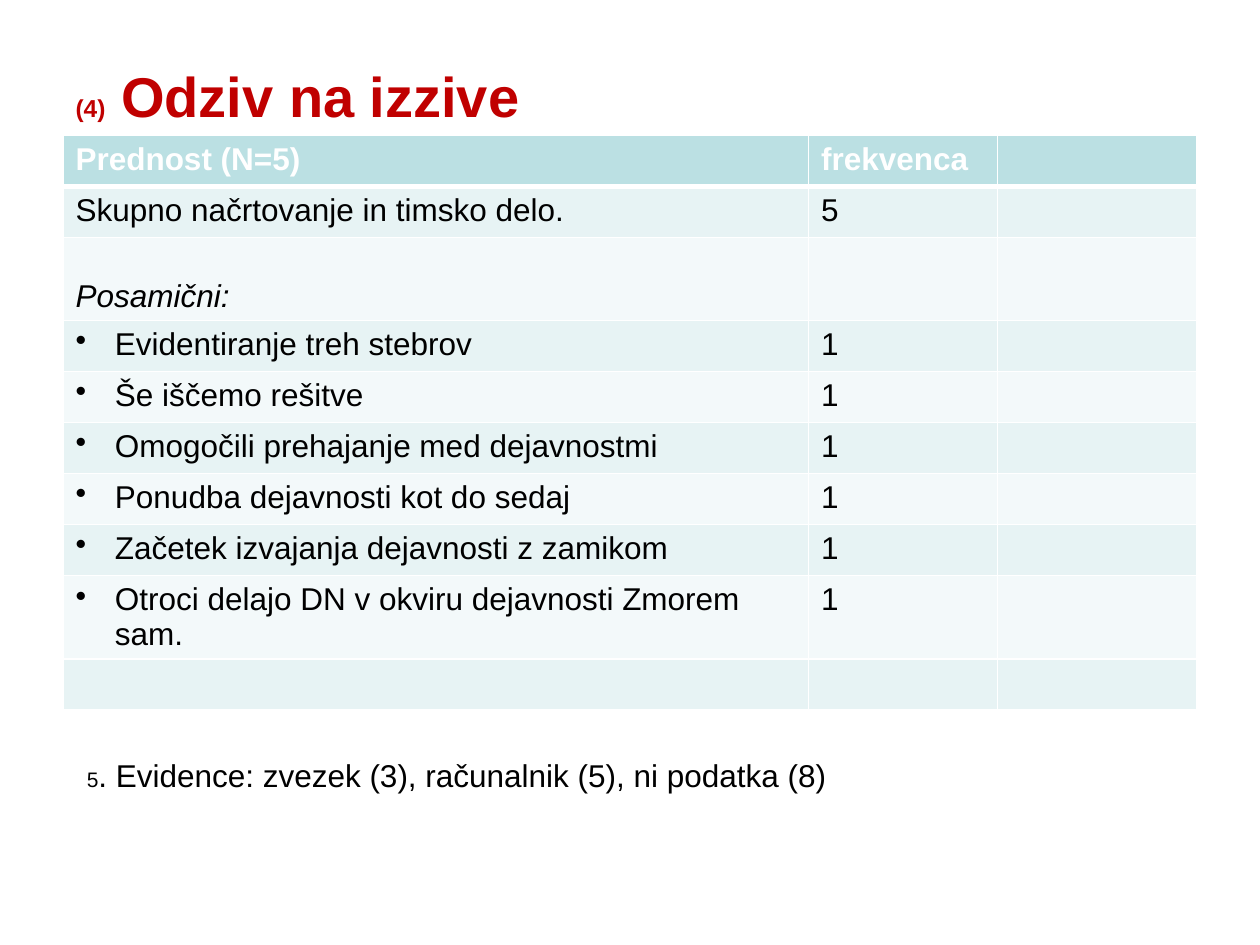
import pptx
import pptx.dml.color
import pptx.enum.text
import pptx.oxml
import pptx.oxml.ns
import pptx.util
from pptx.util import Pt

FONT = "Arial"
HEADER = ["Prednost (N=5)", "frekvenca", ""]
JOINT_ANSWER = "Skupno načrtovanje in timsko delo."
SUBHEADING = "Posamični:"
SINGLE_ANSWERS = [
    "Evidentiranje treh stebrov",
    "Še iščemo rešitve",
    "Omogočili prehajanje med dejavnostmi",
    "Ponudba dejavnosti kot do sedaj",
    "Začetek izvajanja dejavnosti z zamikom",
    "Otroci delajo DN v okviru dejavnosti Zmorem sam.",
]
COLUMN_WIDTHS = [426, 108, 114]
ROW_HEIGHT, TALL_ROW_HEIGHT = 29.2, 47.2
TALL_ROWS = (2, 8)


def rgb(value):
    """Return the colour for a hex string."""
    return pptx.dml.color.RGBColor.from_string(value)


def set_attributes(target, values):
    """Set every attribute named in the dict of values."""
    for name, value in values.items():
        setattr(target, name, value)


def style_font(font, color, **values):
    """Give a font its typeface, colour and further format values."""
    set_attributes(font, {"name": FONT, **values})
    font.color.rgb = rgb(color)


def add_runs(paragraph, runs, color, bold):
    """Add (text, size) runs to a paragraph."""
    for text, size in runs:
        run = paragraph.add_run()
        run.text = text
        style_font(run.font, color, size=Pt(size), bold=bold)


def add_bullet(paragraph):
    """Give a paragraph a hanging round bullet."""
    properties = paragraph._p.get_or_add_pPr()
    properties.set("marL", str(Pt(22.5)))
    properties.set("indent", str(-Pt(22.5)))
    bullet = pptx.oxml.parse_xml(
        f'<a:buChar {pptx.oxml.ns.nsdecls("a")} char="•"/>')
    properties.append(bullet)


def add_borders(cell, top, bottom):
    """Draw white borders round a cell, one point wide at the sides."""
    properties = cell._tc.get_or_add_tcPr()
    widths = {"lnL": 1, "lnR": 1, "lnT": top, "lnB": bottom}
    for position, (side, width) in enumerate(widths.items()):
        border = pptx.oxml.parse_xml(
            f'<a:{side} {pptx.oxml.ns.nsdecls("a")} w="{Pt(width)}">'
            f'<a:solidFill><a:srgbClr val="FFFFFF"/></a:solidFill></a:{side}>')
        properties.insert(position, border)


def fill_title(title, left, top, width, height):
    """Place the numbered slide title."""
    set_attributes(title, {"left": Pt(left), "top": Pt(top),
                           "width": Pt(width), "height": Pt(height)})
    set_attributes(title.text_frame, {
        "vertical_anchor": pptx.enum.text.MSO_ANCHOR.MIDDLE,
        "auto_size": pptx.enum.text.MSO_AUTO_SIZE.NONE,
        "word_wrap": True})
    heading = title.text_frame.paragraphs[0]
    heading.alignment = pptx.enum.text.PP_ALIGN.LEFT
    add_runs(heading, [("(4)", 14), (" Odziv na izzive", 32)], "C00000", True)


def add_answers_table(slide, left, top, width, height):
    """Place the table of answers and their frequencies."""
    rows = [HEADER, [JOINT_ANSWER, "5", ""], [SUBHEADING, "", ""]]
    rows += [[answer, "1", ""] for answer in SINGLE_ANSWERS]
    rows.append(["", "", ""])
    answers = slide.shapes.add_table(
        len(rows), len(HEADER), Pt(left), Pt(top), Pt(width), Pt(height)).table
    for column, column_width in zip(answers.columns, COLUMN_WIDTHS):
        column.width = Pt(column_width)
    for row_index, texts in enumerate(rows):
        is_header = row_index == 0
        is_tall = row_index in TALL_ROWS
        answers.rows[row_index].height = Pt(
            TALL_ROW_HEIGHT if is_tall else ROW_HEIGHT)
        band = "E7F3F4" if row_index % 2 else "F3F9FA"
        for column_index, text in enumerate(texts):
            cell = answers.cell(row_index, column_index)
            cell.fill.solid()
            cell.fill.fore_color.rgb = rgb("BBE0E3" if is_header else band)
            add_borders(cell, 3 if row_index == 1 else 1, 3 if is_header else 1)
            cell.text = text
            paragraph = cell.text_frame.paragraphs[0]
            if text in SINGLE_ANSWERS:
                add_bullet(paragraph)
            if text == SUBHEADING:
                cell.vertical_anchor = pptx.enum.text.MSO_ANCHOR.BOTTOM
            for run in paragraph.runs:
                style_font(run.font, "FFFFFF" if is_header else "000000",
                           size=Pt(18), bold=is_header,
                           italic=text == SUBHEADING)


def add_records_note(slide, left, top, width, height):
    """Place the numbered note on record keeping below the table."""
    note = slide.shapes.add_textbox(Pt(left), Pt(top), Pt(width), Pt(height))
    set_attributes(note.text_frame, {
        "word_wrap": False,
        "auto_size": pptx.enum.text.MSO_AUTO_SIZE.SHAPE_TO_FIT_TEXT})
    runs = [("5", 12), (". Evidence: zvezek (3), računalnik (5), ni podatka (8)", 18)]
    add_runs(note.text_frame.paragraphs[0], runs, "000000", False)


def main():
    """Build the slide and save it."""
    presentation = pptx.Presentation()
    set_attributes(presentation, {"slide_width": Pt(720), "slide_height": Pt(540)})
    slide = presentation.slides.add_slide(presentation.slide_layouts[5])
    fill_title(slide.shapes.title, 36, 9.4, 648, 90)
    add_answers_table(slide, 36, 77.4, 648, 328)
    add_records_note(slide, 42.5, 428.4, 438.5, 29)
    presentation.save("out.pptx")


if __name__ == "__main__":
    main()
